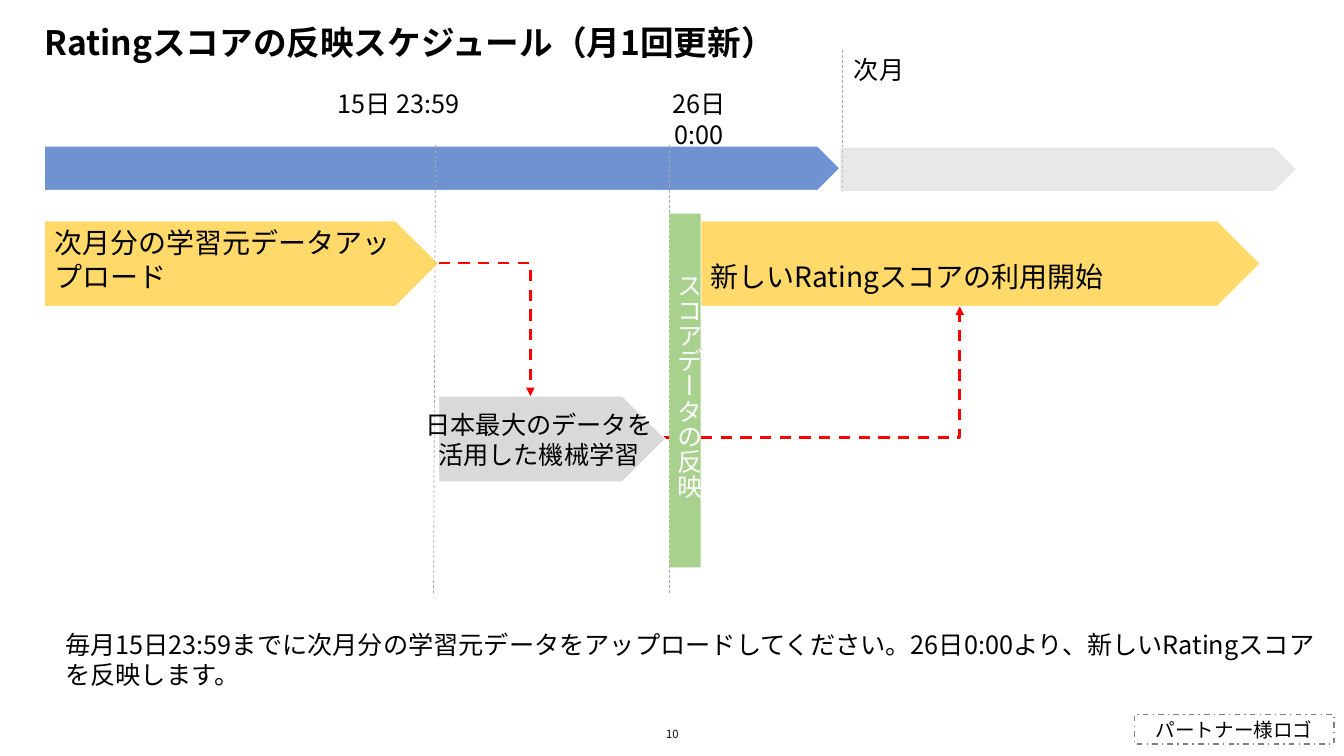
from pptx import Presentation
from pptx.dml.color import RGBColor
from pptx.enum.dml import MSO_LINE
from pptx.enum.shapes import MSO_CONNECTOR, MSO_SHAPE
from pptx.enum.text import MSO_ANCHOR, PP_ALIGN
from pptx.oxml.ns import qn
from pptx.util import Inches, Pt
from lxml.etree import SubElement

FONT = "Noto Sans CJK JP"
BLACK = RGBColor(0x00, 0x00, 0x00)
WHITE = RGBColor(0xFF, 0xFF, 0xFF)
BLUE = RGBColor(0x44, 0x72, 0xC4)
GOLD = RGBColor(0xFF, 0xC0, 0x00)
GREEN = RGBColor(0xA9, 0xD1, 0x8E)
LIGHT_GRAY = RGBColor(0xD9, 0xD9, 0xD9)
RULE_GRAY = RGBColor(0xA6, 0xA6, 0xA6)
FRAME_GRAY = RGBColor(0x80, 0x80, 0x80)
RED = RGBColor(0xFF, 0x00, 0x00)

BAR_HEIGHT = 0.44
STEP_HEIGHT = 0.85


def apply_format(target, values):
    for attribute, value in values.items():
        setattr(target, attribute, value)


def write(shape, lines, size, color=BLACK, bold=False, anchor=MSO_ANCHOR.TOP, **paragraph_format):
    frame = shape.text_frame
    frame.text = "\n".join(lines)
    apply_format(frame, {"word_wrap": True, "vertical_anchor": anchor})
    for paragraph in frame.paragraphs:
        apply_format(paragraph, {"alignment": PP_ALIGN.LEFT, **paragraph_format})
        for run in paragraph.runs:
            apply_format(run.font, {"name": FONT, "size": Pt(size), "bold": bold})
            run.font.color.rgb = color
            SubElement(run.font._element, qn("a:ea"), typeface=FONT)


def add_label(slide, box, lines, size=18, **text_format):
    label = slide.shapes.add_textbox(*map(Inches, box))
    write(label, lines, size, **text_format)
    return label


def add_block(slide, kind, box, fill=None, opacity=100, line=None):
    block = slide.shapes.add_shape(kind, *map(Inches, box))
    block.shadow.inherit = False
    if fill is None:
        block.fill.background()
    else:
        block.fill.solid()
        block.fill.fore_color.rgb = fill
        if opacity < 100:
            color = block._element.spPr.find(qn("a:solidFill"))[0]
            SubElement(color, qn("a:alpha"), val=str(opacity * 1000))
    if line is None:
        block.line.fill.background()
    else:
        color, width = line
        block.line.color.rgb = color
        block.line.width = Pt(width)
    return block


def add_arrow_bar(slide, box, fill, opacity=100):
    return add_block(slide, MSO_SHAPE.PENTAGON, box, fill, opacity, (WHITE, 0.75))


def add_dashed(slide, kind, start, end, color, width):
    link = slide.shapes.add_connector(kind, *map(Inches, start + end))
    link.line.color.rgb = color
    apply_format(link.line, {"width": Pt(width), "dash_style": MSO_LINE.DASH})
    SubElement(link._element.spPr, qn("a:effectLst"))
    return link


def add_rule(slide, start, end):
    add_dashed(slide, MSO_CONNECTOR.STRAIGHT, start, end, RULE_GRAY, 0.5)


def add_flow(slide, start, end):
    flow = add_dashed(slide, MSO_CONNECTOR.ELBOW, start, end, RED, 2)
    flow._element.spPr.find(qn("a:prstGeom")).set("prst", "bentConnector2")
    SubElement(flow.line._ln, qn("a:tailEnd"), type="triangle")


def add_title(slide, box):
    title = slide.shapes.title
    apply_format(title, dict(zip(("left", "top", "width", "height"), map(Inches, box))))
    write(title, ["Ratingスコアの反映スケジュール（月1回更新）"], 24, bold=True,
          anchor=MSO_ANCHOR.MIDDLE, line_spacing=0.9)


def add_timeline(slide, box):
    left, top, width, height = box
    month_end = left + 7.91
    bar_top = top + height - BAR_HEIGHT
    add_rule(slide, (month_end, top), (month_end, top + height))
    add_arrow_bar(slide, (left, bar_top, 7.89, BAR_HEIGHT), BLUE, 77)
    add_arrow_bar(slide, (left + 7.89, bar_top + 0.01, width - 7.89, BAR_HEIGHT), LIGHT_GRAY, 58)
    for lines, offset, label_top, label_width in (
        (["15日 23:59"], 2.79, 0.33, 1.44),
        (["26日", "0:00"], 5.61, 0.33, 1.76),
        (["次月"], 7.4, -0.01, 1.76),
    ):
        add_label(slide, (left + offset, top + label_top, label_width, 0.71), lines,
                  alignment=PP_ALIGN.CENTER)


def add_process(slide, box):
    left, top, width, height = box
    bottom = top + height
    step_top = top + 0.75
    step_bottom = step_top + STEP_HEIGHT
    learning_top = step_top + 1.74
    deadline = left + 3.91
    release = left + 6.2
    start_use = release + 0.31

    add_flow(slide, (left + 6.12, learning_top + 0.41), (left + 9.08, step_bottom))
    add_arrow_bar(slide, (deadline, learning_top, 2.25, STEP_HEIGHT), LIGHT_GRAY)
    add_rule(slide, (release, top), (release, bottom))

    new_score = add_arrow_bar(slide, (start_use, step_top, left + width - start_use, STEP_HEIGHT), GOLD, 58)
    write(new_score, ["新しいRatingスコアの利用開始"], 20, line_spacing=2.0)

    add_block(slide, MSO_SHAPE.RECTANGLE, (release, step_top - 0.07, 0.31, 3.51), GREEN)
    reflection = add_label(slide, (release - 0.1, step_top + 0.42, 0.5, 3.45),
                           ["スコアデータの反映"], color=WHITE)
    reflection.text_frame._txBody.bodyPr.set("vert", "eaVert")

    add_rule(slide, (deadline - 0.03, top), (deadline - 0.05, bottom))
    upload = add_arrow_bar(slide, (left, step_top, 3.91, STEP_HEIGHT), GOLD, 58)
    write(upload, ["次月分の学習元データアップロード"], 20)

    add_label(slide, (left + 1.57, learning_top + 0.08, 6.67, 0.71),
              ["日本最大のデータを", "活用した機械学習"], alignment=PP_ALIGN.CENTER)
    add_flow(slide, (deadline, step_top + 0.42), (deadline + 0.91, learning_top))


def add_footer(slide, box):
    left, top, width, height = box
    add_label(slide, (left, top, width, 0.71),
              ["毎月15日23:59までに次月分の学習元データをアップロードしてください。26日0:00より、新しいRatingスコアを反映します。"])
    add_label(slide, (left + 5.35, top + 0.99, 1.54, 0.2), ["10"], 8,
              anchor=MSO_ANCHOR.MIDDLE, alignment=PP_ALIGN.CENTER)
    partner = add_block(slide, MSO_SHAPE.RECTANGLE,
                        (left + 10.7, top + height - 0.29, 1.98, 0.29), line=(FRAME_GRAY, 1))
    partner.line.dash_style = MSO_LINE.DASH_DOT
    write(partner, ["パートナー様ロゴ"], 14, anchor=MSO_ANCHOR.MIDDLE, alignment=PP_ALIGN.CENTER)


def main():
    deck = Presentation()
    apply_format(deck, {"slide_width": Inches(13.33), "slide_height": Inches(7.5)})
    slide = deck.slides.add_slide(deck.slide_layouts[5])
    add_title(slide, (0.34, 0.22, 12.65, 0.44))
    add_timeline(slide, (0.44, 0.5, 12.42, 1.39))
    add_process(slide, (0.44, 1.44, 12.06, 4.45))
    add_footer(slide, (0.55, 6.19, 12.73, 1.19))
    deck.save("out.pptx")


if __name__ == "__main__":
    main()
